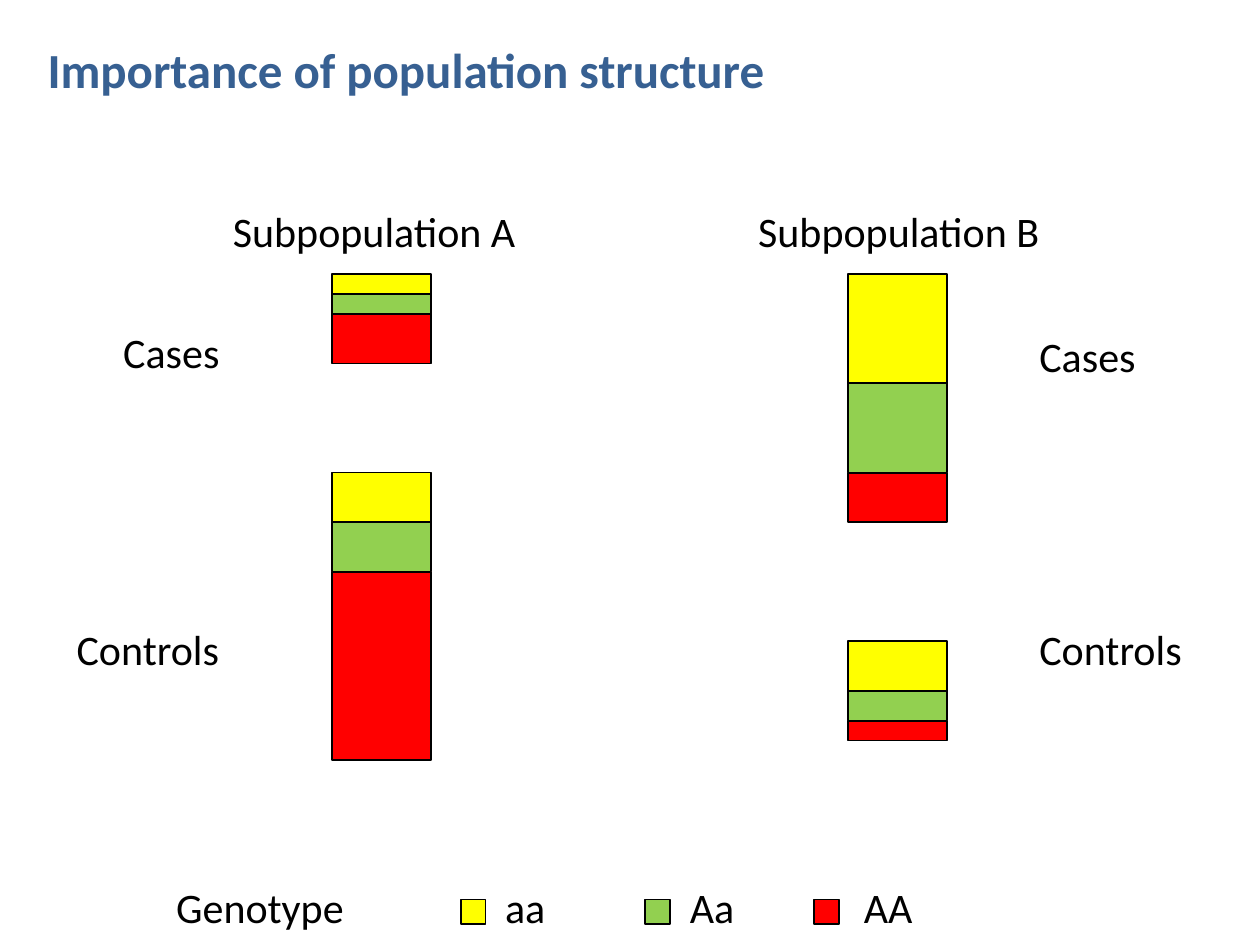
from dataclasses import dataclass
from itertools import accumulate

from lxml import etree
from pptx import Presentation
from pptx.dml.color import RGBColor
from pptx.enum import shapes, text
from pptx.oxml import ns
from pptx.util import Pt


@dataclass(frozen=True)
class Theme:
    """Colours, font and type sizes of the slide."""
    font: str = "Calibri"
    title_size: float = 28
    body_size: float = 24
    title: str = "376092"
    ink: str = "000000"
    genotypes: tuple = (("aa", "FFFF00"), ("Aa", "92D050"), ("AA", "FF0000"))


@dataclass(frozen=True)
class Box:
    """A rectangle in points."""
    left: float
    top: float
    width: float
    height: float

    def inner(self, x, y, width, height):
        """Return a box offset from this one's top left corner."""
        return Box(self.left + x, self.top + y, width, height)

    def lengths(self):
        """Return left, top, width and height as lengths."""
        return [Pt(v) for v in (self.left, self.top, self.width, self.height)]


THEME = Theme()
BAR_WIDTH = 56.7
SHARE = 5.67
LABEL_HEIGHT = 36


def write(frame, words, size, colour, bold=False):
    """Write one left-aligned line into a text frame and return its paragraph."""
    frame.word_wrap = False
    frame.vertical_anchor = text.MSO_ANCHOR.TOP
    para = frame.paragraphs[0]
    para.alignment = text.PP_ALIGN.LEFT
    span = para.add_run()
    span.text = words
    span.font.name = THEME.font
    span.font.size = Pt(size)
    span.font.bold = bold
    span.font.color.rgb = RGBColor.from_string(colour)
    return para


def add_label(page, box, words):
    """Add a body-size label and return its paragraph."""
    label = page.shapes.add_textbox(*box.lengths())
    return write(label.text_frame, words, THEME.body_size, THEME.ink)


def add_block(page, box, colour):
    """Add an outlined rectangle of one genotype colour."""
    block = page.shapes.add_shape(shapes.MSO_SHAPE.RECTANGLE, *box.lengths())
    block.shadow.inherit = False
    block.fill.solid()
    block.fill.fore_color.rgb = RGBColor.from_string(colour)
    block.line.color.rgb = RGBColor.from_string(THEME.ink)
    block.line.width = Pt(1)


def add_title(page, box, words):
    """Place and fill the title placeholder."""
    title = page.shapes.title
    title.left, title.top, title.width, title.height = box.lengths()
    write(title.text_frame, words, THEME.title_size, THEME.title, bold=True)


def add_stack(page, box, shares):
    """Stack one block per genotype downwards from the top of the box."""
    starts = accumulate(shares, initial=0)
    for (_, colour), start, share in zip(THEME.genotypes, starts, shares):
        block = box.inner(0, start * SHARE, box.width, share * SHARE)
        add_block(page, block, colour)


def add_subpopulation(page, box, name, heading_x, bar_x, groups):
    """Add a heading and a labelled stack for each group of a subpopulation."""
    add_label(page, box.inner(heading_x, 0, 177.5, LABEL_HEIGHT), name)
    for words, x, y, width, bar_y, shares in groups:
        add_label(page, box.inner(x, y, width, LABEL_HEIGHT), words)
        bar = box.inner(bar_x, bar_y, BAR_WIDTH, sum(shares) * SHARE)
        add_stack(page, bar, shares)


def add_legend(page, box):
    """Add the genotype key with tabbed names and colour swatches."""
    names = [name for name, _ in THEME.genotypes]
    para = add_label(page, box, "\t".join(["Genotype", *names]))
    tabs = etree.SubElement(para._p.get_or_add_pPr(), ns.qn("a:tabLst"))
    for position in (188, 293.5, 393):
        tab = etree.SubElement(tabs, ns.qn("a:tab"))
        tab.set("pos", str(Pt(position)))
        tab.set("algn", "l")
    for (_, colour), x in zip(THEME.genotypes, (169.7, 275, 371.5)):
        add_block(page, box.inner(x, 13.6, 14.2, 14.2), colour)


def main():
    """Build and save the slide."""
    deck = Presentation()
    deck.slide_width, deck.slide_height = Pt(720), Pt(540)
    page = deck.slides.add_slide(deck.slide_layouts[5])
    add_title(page, Box(20, 18.7, 429, 41), "Importance of population structure")
    add_subpopulation(
        page, Box(36.7, 113.8, 267, 321), "Subpopulation A", 89.3, 153.1,
        [("Cases", 26.6, 69.1, 70, 42.9, (2, 2, 5)),
         ("Controls", 0, 239, 96.5, 156.2, (5, 5, 19))])
    add_subpopulation(
        page, Box(426.2, 113.8, 257, 310), "Subpopulation B", 0, 58.4,
        [("Cases", 160.6, 71.3, 70, 42.9, (11, 9, 5)),
         ("Controls", 160.6, 239, 96.5, 252.7, (5, 3, 2))])
    add_legend(page, Box(93.6, 500.4, 449.3, LABEL_HEIGHT))
    deck.save("out.pptx")


if __name__ == "__main__":
    main()
